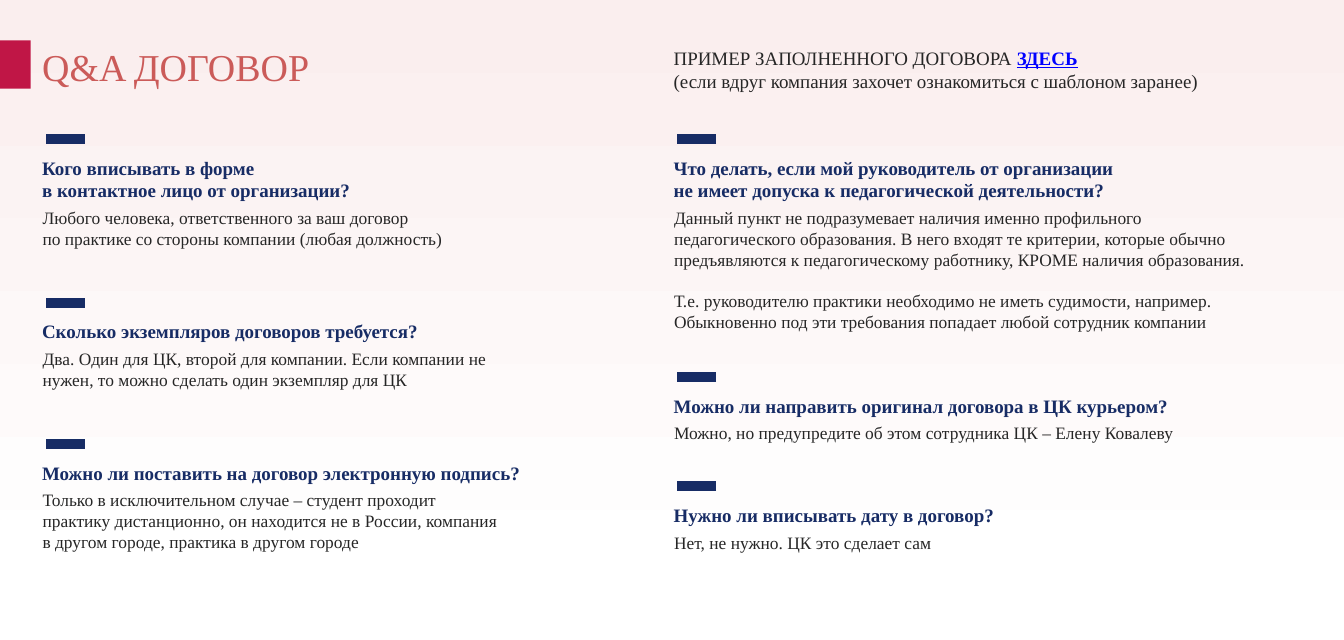
from dataclasses import dataclass

from lxml import etree
from pptx import Presentation
from pptx.dml.color import RGBColor
from pptx.enum.shapes import MSO_CONNECTOR, MSO_SHAPE
from pptx.enum.text import MSO_ANCHOR, MSO_AUTO_SIZE, PP_ALIGN
from pptx.oxml.ns import qn
from pptx.util import Inches, Pt

STRAIGHT = MSO_CONNECTOR.STRAIGHT
RECTANGLE = MSO_SHAPE.RECTANGLE
TOP = MSO_ANCHOR.TOP
LEFT = PP_ALIGN.LEFT
NO_FIT = MSO_AUTO_SIZE.NONE
GROW = MSO_AUTO_SIZE.SHAPE_TO_FIT_TEXT
TITLE_ONLY = 5


@dataclass(frozen=True)
class Theme:
    font: str = "Times New Roman"
    title: str = "CB5B59"
    accent: str = "C01646"
    navy: str = "172C65"
    body: str = "262626"
    link: str = "0000FF"
    background: tuple = ((0.09, "FFFFFF"), (1, "FAEEEE"))
    title_size: int = 24
    heading_size: int = 12
    body_size: int = 11
    bar_weight: int = 6


# Lengths below are percentages of the slide's width or height
COLUMNS = (3.05, 50.04)
BAR_OFFSET, BAR_LENGTH = 0.34, 2.91
QUESTION_DROP, QUESTION_HEIGHT = 2.5, 6.58
ANSWER_SHIFT, ANSWER_DROP, QUESTION_LINE = -0.8, 2.67, 3.56
ANSWER_PADDING, ANSWER_LINE = 1.8, 3.35
TIGHT = {"margin_left": 0, "margin_top": Inches(0.01), "margin_right": 0, "margin_bottom": 0}


class SlideBuilder:
    def __init__(self, presentation, theme):
        self.theme = theme
        self.width = presentation.slide_width
        self.height = presentation.slide_height
        self.slide = presentation.slides.add_slide(presentation.slide_layouts[TITLE_ONLY])

    def box(self, left, top, width, height):
        return (round(self.width * left / 100), round(self.height * top / 100),
                round(self.width * width / 100), round(self.height * height / 100))

    def background(self):
        fill = self.slide.background.fill
        fill.gradient()
        fill.gradient_angle = 90
        for stop, (position, color) in zip(fill.gradient_stops, self.theme.background):
            stop.position = position
            stop.color.rgb = RGBColor.from_string(color)

    def fill_text(self, frame, paragraphs, size, color, bold=False, gap=0, **frame_format):
        """Each paragraph is a list of (text, run format) pairs."""
        frame_format = {"word_wrap": True, "vertical_anchor": TOP,
                        "auto_size": NO_FIT, **frame_format}
        for name, value in frame_format.items():
            setattr(frame, name, value)
        for index, runs in enumerate(paragraphs):
            paragraph = frame.add_paragraph() if index else frame.paragraphs[0]
            paragraph.alignment = LEFT
            paragraph.space_before = Pt(gap if index else 0)
            paragraph._p.get_or_add_pPr().set("marL", str(Inches(0.01)))
            for text, run_format in runs:
                run = paragraph.add_run()
                run.text = text
                font_format = {"name": self.theme.font, "size": Pt(size),
                               "bold": bold, "color": color, **run_format}
                run.font.color.rgb = RGBColor.from_string(font_format.pop("color"))
                for name, value in font_format.items():
                    setattr(run.font, name, value)

    def title(self, text, *position):
        shape = self.slide.shapes.title
        shape.left, shape.top, shape.width, shape.height = self.box(*position)
        self.fill_text(shape.text_frame, [[(text, {})]],
                       self.theme.title_size, self.theme.title, **TIGHT)

    def text(self, position, paragraphs, size, color, **options):
        shape = self.slide.shapes.add_textbox(*self.box(*position))
        self.fill_text(shape.text_frame, paragraphs, size, color, **options)

    def block(self, *position):
        shape = self.slide.shapes.add_shape(RECTANGLE, *self.box(*position))
        shape.shadow.inherit = False
        shape.fill.solid()
        shape.fill.fore_color.rgb = RGBColor.from_string(self.theme.accent)
        shape.line.fill.background()

    def bar(self, left, top):
        x, y, length, _ = self.box(left, top, BAR_LENGTH, 0)
        line = self.slide.shapes.add_connector(STRAIGHT, x + length, y, x, y)
        line.line.color.rgb = RGBColor.from_string(self.theme.navy)
        line.line.width = Pt(self.theme.bar_weight)
        etree.SubElement(line._element.spPr, qn("a:effectLst"))

    def question(self, column, top, question, question_lines, question_width,
                 answer, answer_lines, answer_width, gap=0):
        left = COLUMNS[column]
        self.bar(left + BAR_OFFSET, top)
        self.text((left, top + QUESTION_DROP, question_width, QUESTION_HEIGHT),
                  [[(line, {})] for line in question],
                  self.theme.heading_size, self.theme.navy, bold=True, **TIGHT)
        self.text((left + ANSWER_SHIFT, top + ANSWER_DROP + QUESTION_LINE * question_lines,
                   answer_width, ANSWER_PADDING + ANSWER_LINE * answer_lines),
                  [[(line, {})] for line in answer],
                  self.theme.body_size, self.theme.body, gap=gap, auto_size=GROW)


# Column, bar height, question, its lines and width, answer, its lines and width, paragraph gap
QUESTIONS = (
    (0, 21.71, ["Кого вписывать в форме", "в контактное лицо от организации?"], 2, 30.65,
     ["Любого человека, ответственного за ваш договор",
      "по практике со стороны компании (любая должность)"], 2, 33.19),
    (0, 47.33, ["Сколько экземпляров договоров требуется?"], 1, 30.65,
     ["Два. Один для ЦК, второй для компании. Если компании не нужен, "
      "то можно сделать один экземпляр для ЦК"], 2, 35.06),
    (0, 69.4, ["Можно ли поставить на договор электронную подпись?"], 1, 37.09,
     ["Только в исключительном случае – студент проходит практику дистанционно, "
      "он находится не в России, компания в другом городе, практика в другом городе"],
     3, 35.99),
    (1, 21.71, ["Что делать, если мой руководитель от организации "
                "не имеет допуска к педагогической деятельности?"], 2, 34.21,
     ["Данный пункт не подразумевает наличия именно профильного педагогического "
      "образования. В него входят те критерии, которые обычно предъявляются "
      "к педагогическому работнику, КРОМЕ наличия образования.",
      "Т.е. руководителю практики необходимо не иметь судимости, например. "
      "Обыкновенно под эти требования попадает любой сотрудник компании"],
     6, 44.37, 13),
    (1, 58.9, ["Можно ли направить оригинал договора в ЦК курьером?"], 1, 38.44,
     ["Можно, но предупредите об этом сотрудника ЦК – Елену Ковалеву"], 1, 43.35),
    (1, 75.98, ["Нужно ли вписывать дату в договор?"], 1, 37.09,
     ["Нет, не нужно. ЦК это сделает сам"], 1, 35.99),
)


def main():
    presentation = Presentation()
    presentation.slide_width, presentation.slide_height = Inches(11.81), Inches(5.62)
    theme = Theme()
    builder = SlideBuilder(presentation, theme)

    # Background and header
    builder.background()
    builder.title("Q&A ДОГОВОР", COLUMNS[0], 6.58, 38.27, 14.59)
    builder.block(0, 6.3, 2.29, 7.55)
    link_format = {"color": theme.link, "bold": True, "underline": True}
    builder.text((COLUMNS[1], 7.12, 48.69, 8.36),
                 [[("ПРИМЕР ЗАПОЛНЕННОГО ДОГОВОРА ", {}), ("ЗДЕСЬ", link_format)],
                  [("(если вдруг компания захочет ознакомиться с шаблоном заранее)", {})]],
                 theme.heading_size, theme.body, **TIGHT)

    # Questions and answers
    for entry in QUESTIONS:
        builder.question(*entry)

    presentation.save("out.pptx")


if __name__ == "__main__":
    main()
